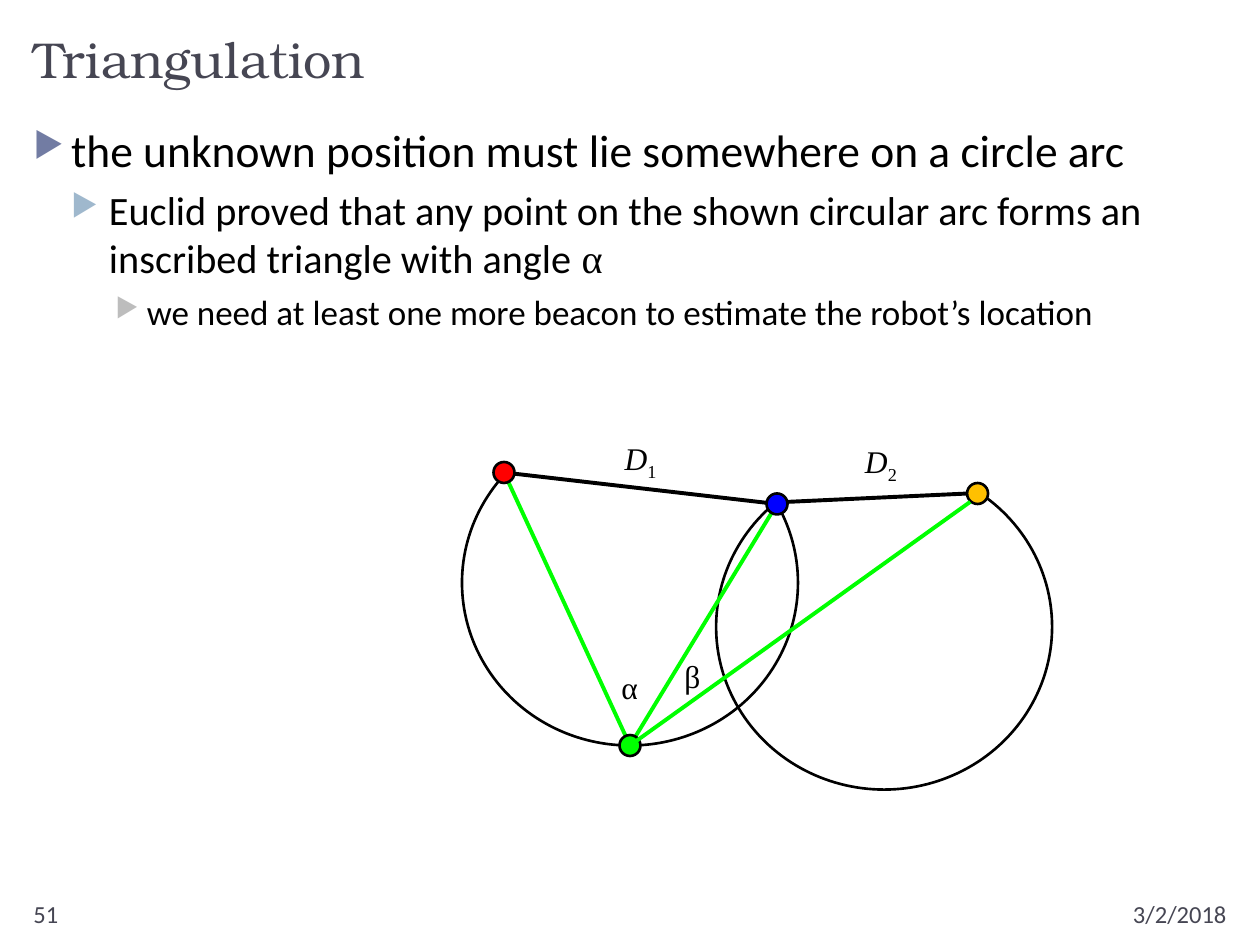
from lxml.etree import SubElement
from pptx import Presentation
from pptx.dml.color import RGBColor
from pptx.enum.shapes import MSO_CONNECTOR as Connector, MSO_SHAPE as Shape
from pptx.enum.text import MSO_ANCHOR as Anchor, MSO_AUTO_SIZE as AutoSize, PP_ALIGN as Align
from pptx.oxml.ns import qn
from pptx.util import Inches, Pt

BLACK = RGBColor(0x00, 0x00, 0x00)
WHITE = RGBColor(0xFF, 0xFF, 0xFF)
SLATE = RGBColor(0x46, 0x46, 0x53)
RED = RGBColor(0xFF, 0x00, 0x00)
GREEN = RGBColor(0x00, 0xFF, 0x00)
BLUE = RGBColor(0x00, 0x00, 0xFF)
AMBER = RGBColor(0xFF, 0xC0, 0x00)
INDIGO = RGBColor(0x72, 0x7C, 0xA3)
SKY = RGBColor(0x9F, 0xB8, 0xCD)
SILVER = RGBColor(0xBD, 0xBD, 0xBD)

SANS, SERIF, DISPLAY = "Calibri", "Times New Roman", "TeX Gyre Bonum"
CELL = Inches(1) / 12  # the slide is 120 columns by 90 rows
DOT = 2

# level: size, space before, left margin, hanging indent, bullet colour
LEVELS = [
    (26, 6, 0.3, 0.3, INDIGO),
    (23, 5, 0.6, 0.3, SKY),
    (20, 5, 0.9, 0.25, SILVER),
]
POINTS = [
    [("the unknown position must lie somewhere on a circle arc", SANS)],
    [("Euclid proved that any point on the shown circular arc forms an "
      "inscribed triangle with angle ", SANS), ("α", SERIF)],
    [("we need at least one more beacon to estimate the robot’s location", SANS)],
]


def cells(*counts):
    return [round(count * CELL) for count in counts]


def add_span(para, text, color=BLACK, **formats):
    span = para.add_run()
    span.text = text
    span.font.color.rgb = color
    for name, value in formats.items():
        setattr(span.font, name, value)
    return span


def add_text_box(page, box, wrap=True):
    frame = page.shapes.add_textbox(*cells(*box)).text_frame
    frame.word_wrap = wrap
    return frame


def add_shape(page, kind, box, fill=None, line=None):
    shape = page.shapes.add_shape(kind, *cells(*box))
    shape.shadow.inherit = False
    if fill is None:
        shape.fill.background()
    else:
        shape.fill.solid()
        shape.fill.fore_color.rgb = fill
    if line is None:
        shape.line.fill.background()
    else:
        shape.line.color.rgb = line
        shape.line.width = Pt(1.5)


def add_line(page, start, end, color):
    line = page.shapes.add_connector(Connector.STRAIGHT, *cells(*start, *end))
    line.line.color.rgb = color
    line.line.width = Pt(2.25)
    SubElement(line._element.spPr, qn("a:effectLst"))


def set_bullet(para, margin, hanging, color):
    props = para._p.get_or_add_pPr()
    props.set("marL", str(Inches(margin)))
    props.set("indent", str(-Inches(hanging)))
    bullet_color = SubElement(props, qn("a:buClr"))
    SubElement(bullet_color, qn("a:srgbClr"), val=str(color))
    SubElement(props, qn("a:buSzPct"), val="76000")
    SubElement(props, qn("a:buChar"), char="▶")


def place_title(page, box, text):
    title = page.shapes.title
    title.left, title.top, title.width, title.height = cells(*box)
    frame = title.text_frame
    for name, value in dict(auto_size=AutoSize.NONE, word_wrap=True,
                            vertical_anchor=Anchor.BOTTOM).items():
        setattr(frame, name, value)
    para = frame.paragraphs[0]
    para.alignment = Align.LEFT
    add_span(para, text, SLATE, name=DISPLAY, size=Pt(28.8))


def place_points(page, box):
    frame = add_text_box(page, box)
    for level, (parts, style) in enumerate(zip(POINTS, LEVELS)):
        size, before, margin, hanging, color = style
        para = frame.add_paragraph() if level else frame.paragraphs[0]
        para.level = level
        para.space_before = Pt(before)
        set_bullet(para, margin, hanging, color)
        for text, font in parts:
            add_span(para, text, name=font, size=Pt(size))


def place_footer(page, box, text, align):
    para = add_text_box(page, box).paragraphs[0]
    para.alignment = align
    add_span(para, text, SLATE, name=SANS, size=Pt(14))


def place_label(page, left, top, letter, index=""):
    """Add a symbol; one with an index is italic with a subscript."""
    box = (left, top, 5.6 if index else 4, 4.8)
    para = add_text_box(page, box, wrap=False).paragraphs[0]
    style = dict(name=SERIF, size=Pt(18))
    add_span(para, letter, italic=bool(index), **style)
    if index:
        span = add_span(para, index, **style)
        span.font._element.set("baseline", "-25000")


def place_diagram(page, box):
    """Draw two circle arcs through the beacons, with sight lines from the robot."""
    left, top, width, height = box

    def at(x, y):
        return left + x, top + y

    robot, red, blue, amber = at(16, 40), at(4, 14), at(30, 17), at(49.1, 16)

    for corner in (at(24.2, 13.2), at(0, 9)):
        add_shape(page, Shape.OVAL, (*corner, 32, 31), line=BLACK)
    # White covers leave only the arcs below the baselines
    for corner in (at(3, 6), at(8, 9), at(23, 7.6)):
        add_shape(page, Shape.RECTANGLE, (*corner, 26, 8), fill=WHITE)

    add_line(page, robot, red, GREEN)
    add_line(page, robot, blue, GREEN)
    add_line(page, red, blue, BLACK)
    add_line(page, at(31, 16.8), at(48.2, 16), BLACK)
    for (x, y), color in ((robot, GREEN), (blue, BLUE), (red, RED), (amber, AMBER)):
        add_shape(page, Shape.OVAL, (x - DOT / 2, y - DOT / 2, DOT, DOT), color, BLACK)
    add_line(page, robot, at(48.4, 16.8), GREEN)

    place_label(page, *at(14, 32), "α")
    place_label(page, *at(20, 31), "β")
    place_label(page, *at(14.3, 10.2), "D", "1")
    place_label(page, *at(37.2, 10.5), "D", "2")


def main():
    deck = Presentation()
    deck.slide_width, deck.slide_height = cells(120, 90)
    page = deck.slides.add_slide(deck.slide_layouts[5])
    place_title(page, (2, 2, 116, 7), "Triangulation")
    place_footer(page, (96, 85, 22, 3.2), "3/2/2018", Align.RIGHT)
    place_footer(page, (2, 85, 26, 3.2), "51", Align.LEFT)
    place_points(page, (2, 11, 116, 72))
    place_diagram(page, (44, 31, 56.2, 44.2))
    deck.save("out.pptx")


if __name__ == "__main__":
    main()
